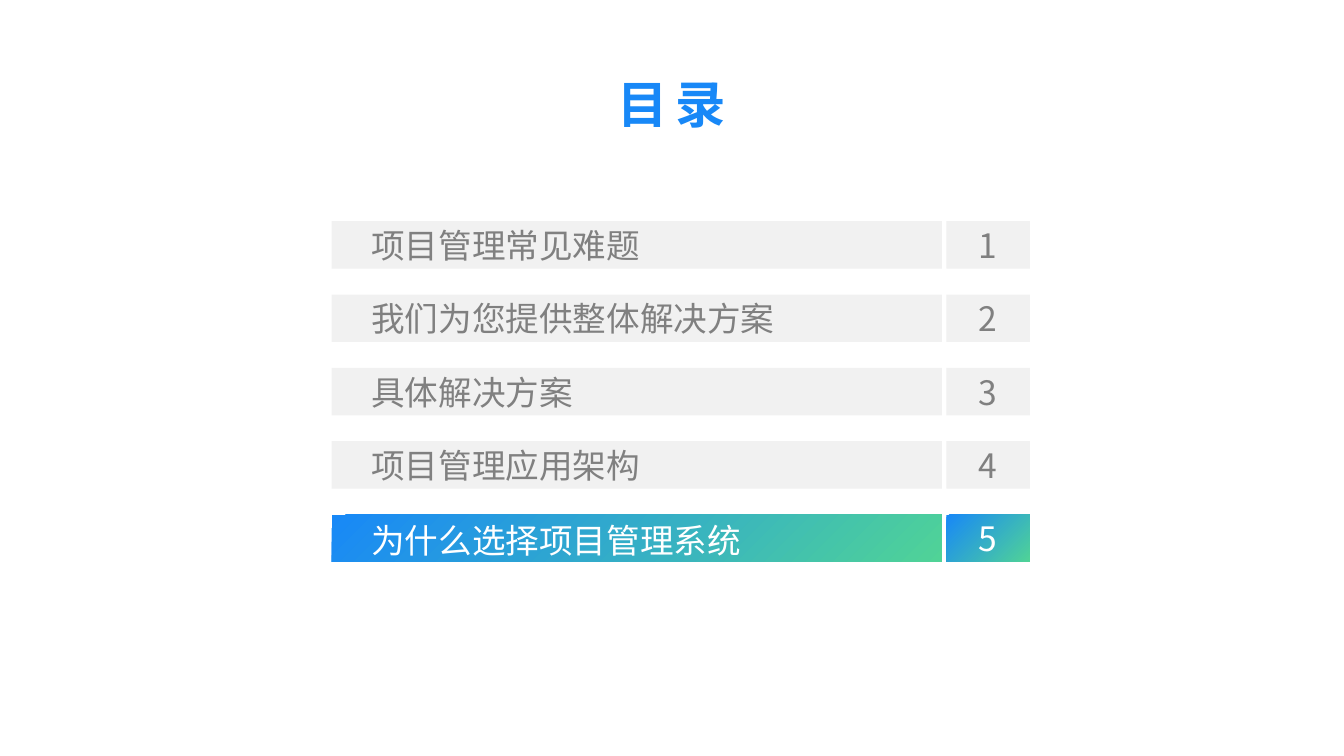
from dataclasses import dataclass

from pptx import Presentation
from pptx.dml.color import RGBColor
from pptx.dml.fill import FillFormat
from pptx.enum.shapes import MSO_SHAPE
from pptx.enum.text import MSO_ANCHOR as Anchor, MSO_AUTO_SIZE as Fit, PP_ALIGN as Align
from pptx.oxml.ns import qn
from pptx.slide import Slide
from pptx.text.text import TextFrame, _Run as Run
from pptx.util import Inches, Pt

FONT = "Noto Sans CJK JP"
BLUE = RGBColor(0x18, 0x88, 0xF7)
GREEN = RGBColor(0x50, 0xD3, 0x97)
PALE = RGBColor(0xF1, 0xF1, 0xF1)
GRAY = RGBColor(0x80, 0x80, 0x80)
WHITE = RGBColor(0xFF, 0xFF, 0xFF)

TOP, STEP, HEIGHT = 4.39, 1.455, 0.94


@dataclass
class Cell:
    left: float
    width: float
    inset: float
    align: Align


@dataclass
class Entry:
    text: str
    active: bool = False


NAME = Cell(6.58, 12.11, 0.79, Align.LEFT)
NUMBER = Cell(18.78, 1.66, 0.1, Align.CENTER)

ENTRIES = [
    Entry("项目管理常见难题"),
    Entry("我们为您提供整体解决方案"),
    Entry("具体解决方案"),
    Entry("项目管理应用架构"),
    Entry("为什么选择项目管理系统", active=True),
]


def blend(fill: FillFormat, angle: float) -> None:
    """Fill with the blue to green gradient, angle counted anticlockwise."""
    fill.gradient()
    fill.gradient_angle = angle
    for stop, color, place in zip(fill.gradient_stops, (BLUE, GREEN), (0, 1)):
        stop.color.rgb = color
        stop.position = place


def add_run(frame: TextFrame, text: str, size: int, align: Align) -> Run:
    para = frame.paragraphs[0]
    para.alignment = align
    run = para.add_run()
    run.text = text
    run.font.size = Pt(size)
    run.font.name = FONT
    props = run.font._element
    east = props.makeelement(qn("a:ea"), {"typeface": FONT})
    props.find(qn("a:latin")).addnext(east)
    return run


def add_title(slide: Slide, text: str) -> None:
    title = slide.shapes.title
    title.left, title.top = Inches(5.94), Inches(1.25)
    title.width, title.height = Inches(14.78), Inches(1.49)
    frame = title.text_frame
    frame.word_wrap = True
    frame.auto_size = Fit.SHAPE_TO_FIT_TEXT
    frame.vertical_anchor = Anchor.MIDDLE
    frame.margin_left = frame.margin_right = Inches(0.1)
    frame.margin_top = frame.margin_bottom = Inches(0.1)
    run = add_run(frame, text, 72, Align.CENTER)
    frame.paragraphs[0].line_spacing = 1.1
    run.font.bold = True
    run.font._element.set("spc", "1200")
    blend(run.font.fill, 0)


def add_cell(slide: Slide, cell: Cell, top: float, text: str, active: bool) -> None:
    box = slide.shapes.add_shape(
        MSO_SHAPE.RECTANGLE,
        Inches(cell.left), Inches(top), Inches(cell.width), Inches(HEIGHT),
    )
    box.shadow.inherit = False
    box.line.fill.background()
    if active:
        blend(box.fill, 315)
    else:
        box.fill.solid()
        box.fill.fore_color.rgb = PALE
    frame = box.text_frame
    frame.word_wrap = True
    frame.vertical_anchor = Anchor.MIDDLE
    frame.margin_left = Inches(cell.inset)
    run = add_run(frame, text, 48, cell.align)
    run.font.color.rgb = WHITE if active else GRAY
    if active and cell is NAME:
        frame.paragraphs[0].line_spacing = 1.1


def main() -> None:
    deck = Presentation()
    deck.slide_width, deck.slide_height = Inches(26.67), Inches(15)
    slide = deck.slides.add_slide(deck.slide_layouts.get_by_name("Title Only"))
    add_title(slide, "目录")
    for index, entry in enumerate(ENTRIES):
        top = TOP + index * STEP
        add_cell(slide, NAME, top, entry.text, entry.active)
        add_cell(slide, NUMBER, top, str(index + 1), entry.active)
    deck.save("out.pptx")


if __name__ == "__main__":
    main()
